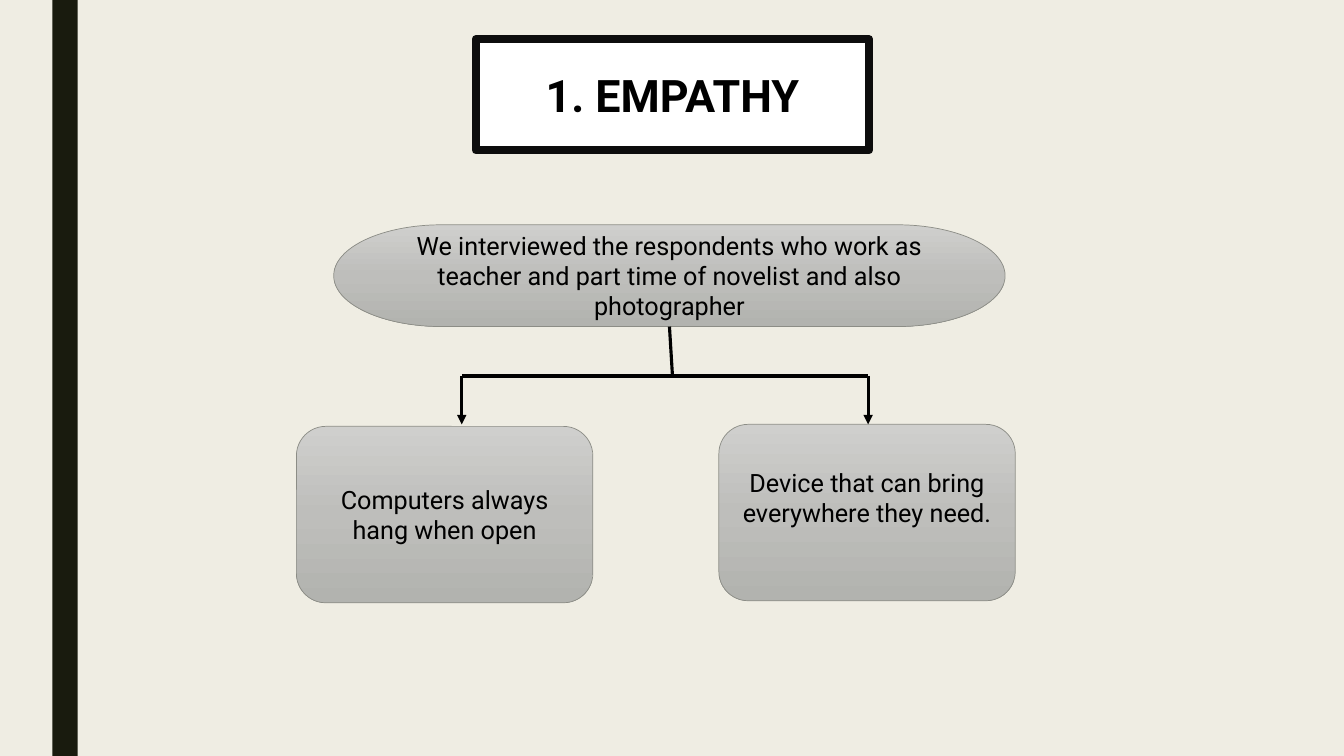
from copy import deepcopy

from pptx import Presentation
from pptx.dml.color import RGBColor
from pptx.enum.shapes import MSO_CONNECTOR as Connector, MSO_SHAPE as Shape
from pptx.enum.text import MSO_ANCHOR as Anchor, PP_ALIGN as Align
from pptx.oxml.ns import qn
from pptx.util import Inches, Pt
from lxml.etree import SubElement


def color(value):
    return RGBColor.from_string(value)


def write(shape, text, size=18, bold=False, ink="000000", font="Roboto", bottom=0.05):
    frame = shape.text_frame
    frame.word_wrap = True
    frame.vertical_anchor = Anchor.MIDDLE
    frame.margin_bottom = Inches(bottom)
    para = frame.paragraphs[0]
    para.alignment = Align.CENTER
    span = para.add_run()
    span.text = text
    span.font.name = font
    span.font.size = Pt(size)
    span.font.bold = bold
    span.font.color.rgb = color(ink)


class FlowSlide:
    GRADIENT = ((0, "CFCFCD"), (0.5, "BEBEBB"), (1, "B2B3AF"))
    EDGE = "8C8D86"
    ARROW = "000000"

    def __init__(self, deck, background):
        self.page = deck.slides.add_slide(deck.slide_layouts[6])
        fill = self.page.background.fill
        fill.solid()
        fill.fore_color.rgb = color(background)

    def block(self, kind, left, top, width, height, fill=None, line=None, weight=0.5):
        """Add a shape; without a fill colour it gets the grey gradient."""
        box = self.page.shapes.add_shape(
            kind, Inches(left), Inches(top), Inches(width), Inches(height))
        box.shadow.inherit = False
        if fill:
            box.fill.solid()
            box.fill.fore_color.rgb = color(fill)
        else:
            self.shade(box)
        if line:
            box.line.color.rgb = color(line)
            box.line.width = Pt(weight)
        else:
            box.line.fill.background()
        return box

    def shade(self, box):
        """Fill the box with the three-stop gradient, light at the top."""
        box.fill.gradient()
        box.fill.gradient_angle = 270
        first = next(box._element.spPr.iter(qn("a:gs")))
        first.addnext(deepcopy(first))
        for stop, (position, shade) in zip(box.fill.gradient_stops, self.GRADIENT):
            stop.position = position
            stop.color.rgb = color(shade)

    def node(self, kind, left, top, width, height, text, **style):
        write(self.block(kind, left, top, width, height, line=self.EDGE), text, **style)

    def link(self, start, end, arrow=False):
        link = self.page.shapes.add_connector(
            Connector.STRAIGHT, *(Inches(value) for value in (*start, *end)))
        link.line.color.rgb = color(self.ARROW)
        link.line.width = Pt(2.25)
        if arrow:
            SubElement(link.line._get_or_add_ln(), qn("a:tailEnd"), type="triangle")
        SubElement(link._element.spPr, qn("a:effectLst"))


def main():
    deck = Presentation()
    deck.slide_width, deck.slide_height = Inches(13.33), Inches(7.5)
    slide = FlowSlide(deck, "EFEDE3")

    slide.block(Shape.RECTANGLE, 0.52, 0, 0.25, 7.5, fill="191B0E")
    title = slide.block(Shape.RECTANGLE, 4.72, 0.39, 3.9, 1.1,
                        fill="FFFFFF", line="0D0D0D", weight=6)
    write(title, "1. EMPATHY", size=32, bold=True)

    slide.node(Shape.FLOWCHART_TERMINATOR, 3.31, 2.23, 6.66, 1.01,
               "We interviewed the respondents who work as teacher and "
               "part time of novelist and also photographer")
    slide.node(Shape.ROUNDED_RECTANGLE, 2.94, 4.23, 2.94, 1.75,
               "Computers always hang when open")
    slide.node(Shape.ROUNDED_RECTANGLE, 7.13, 4.21, 2.94, 1.75,
               "Device that can bring everywhere they need.", bottom=0.35)

    branch_y, arrow_y = 3.73, 4.21
    left_x, right_x = 4.58, 8.61
    fork = (6.67, branch_y)
    slide.link((6.64, 3.24), fork)
    for branch_x in (left_x, right_x):
        slide.link(fork, (branch_x, branch_y))
        slide.link((branch_x, branch_y), (branch_x, arrow_y), arrow=True)

    deck.save("out.pptx")


if __name__ == "__main__":
    main()
